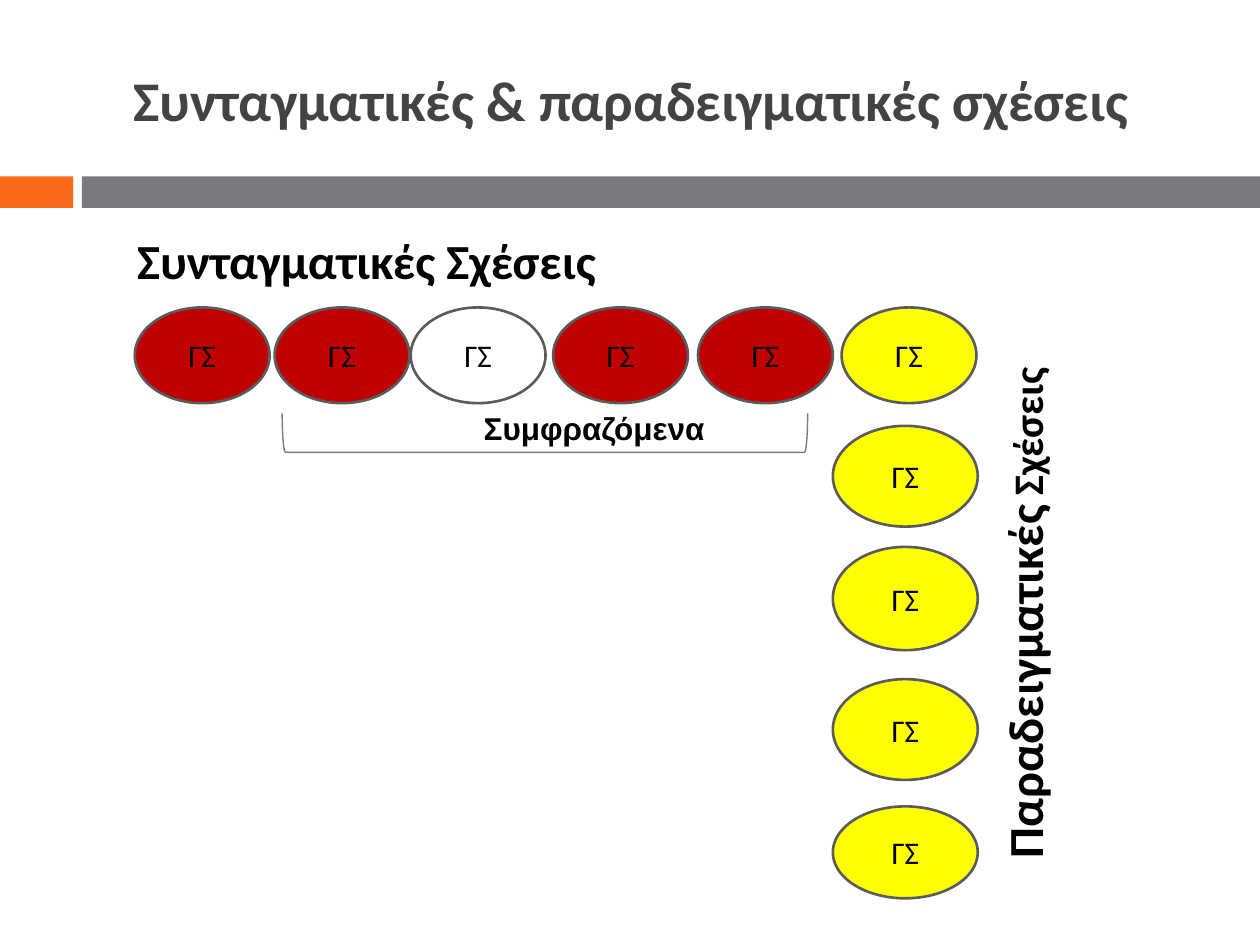
from pptx import Presentation
from pptx.dml.color import RGBColor
from pptx.enum.shapes import MSO_SHAPE
from pptx.enum.text import MSO_ANCHOR, PP_ALIGN
from pptx.util import Inches, Pt

RECTANGLE, ELLIPSE = MSO_SHAPE.RECTANGLE, MSO_SHAPE.OVAL
BRACKET = MSO_SHAPE.LEFT_BRACKET
MIDDLE, CENTER, LEFT = MSO_ANCHOR.MIDDLE, PP_ALIGN.CENTER, PP_ALIGN.LEFT

RED, WHITE, YELLOW = "C00000", "FFFFFF", "FFFF00"
ORANGE, GRAY, OUTLINE = "F96A1B", "797B7E", "5A5B5D"
BLACK, TITLE_GRAY = "000000", "434342"

LABEL = {"name": "Calibri", "size": Pt(18), "bold": False}
HEADING = {"name": "Calibri", "size": Pt(28), "bold": True}
HEADING_SMALL = {**HEADING, "size": Pt(24)}
TITLE = {**HEADING, "size": Pt(32)}
CONTEXT = {"name": "Arial", "size": Pt(18), "bold": True}

# Syntagmatic row: left edge and fill; paradigmatic column: top and height
ROW = [(1.07, RED), (2.18, RED), (3.26, WHITE), (4.39, RED), (5.54, RED), (6.68, YELLOW)]
COLUMN = [(3.38, 0.8), (4.34, 0.82), (5.39, 0.8), (6.4, 0.73)]


def rgb(color):
    return RGBColor.from_string(color)


def write(frame, pieces, align=LEFT, color=BLACK):
    """Write (text, format) pieces as the runs of one paragraph."""
    paragraph = frame.paragraphs[0]
    paragraph.alignment = align
    for text, style in pieces:
        run = paragraph.add_run()
        run.text = text
        run.font.color.rgb = rgb(color)
        for attribute, value in style.items():
            setattr(run.font, attribute, value)


def add_figure(slide, kind, box, fill=None, line=None, weight=1.5):
    figure = slide.shapes.add_shape(kind, *map(Inches, box))
    figure.shadow.inherit = False
    if fill:
        figure.fill.solid()
        figure.fill.fore_color.rgb = rgb(fill)
    else:
        figure.fill.background()
    if line:
        figure.line.color.rgb = rgb(line)
        figure.line.width = Pt(weight)
    else:
        figure.line.fill.background()
    return figure


def add_unit(slide, box, fill):
    frame = add_figure(slide, ELLIPSE, box, fill, OUTLINE).text_frame
    frame.vertical_anchor = MIDDLE
    write(frame, [("ΓΣ", LABEL)], CENTER)


def add_caption(slide, box, pieces, rotation=0):
    caption = slide.shapes.add_textbox(*map(Inches, box))
    caption.rotation = rotation
    caption.text_frame.word_wrap = True
    write(caption.text_frame, pieces)


def add_title(slide, box, text):
    title = slide.shapes.title
    title.left, title.top, title.width, title.height = map(Inches, box)
    title.text_frame.vertical_anchor = MIDDLE
    write(title.text_frame, [(text, TITLE)], CENTER, TITLE_GRAY)


def main():
    prs = Presentation()
    prs.slide_width, prs.slide_height = Inches(10), Inches(7.5)
    slide = prs.slides.add_slide(prs.slide_layouts[5])

    # Title and the band below it
    add_figure(slide, RECTANGLE, (0, 1.4, 0.58, 0.25), ORANGE)
    add_figure(slide, RECTANGLE, (0.65, 1.4, 9.35, 0.25), GRAY)
    add_title(slide, (0.13, 0.25, 9.76, 1.08), "Συνταγματικές & παραδειγματικές σχέσεις")

    # Syntagmatic relations
    for left, fill in ROW:
        add_unit(slide, (left, 2.44, 1.07, 0.76), fill)
    add_caption(slide, (0.99, 1.78, 4.06, 0.6), [("Συνταγματικές Σχέσεις", HEADING)])

    # Paradigmatic relations
    for top, height in COLUMN:
        add_unit(slide, (6.61, top, 1.15, height), YELLOW)
    add_caption(slide, (5.97, 4.44, 4.34, 0.6),
                [("Παραδειγματικές", HEADING), (" Σχέσεις", HEADING_SMALL)], 270)

    # Context bracket
    bracket = add_figure(slide, BRACKET, (4.17, 1.35, 0.31, 4.17), line=GRAY, weight=0.79)
    bracket.rotation = 270
    add_caption(slide, (3.74, 3.2, 2.28, 0.4), [("Συμφραζόμενα", CONTEXT)])

    prs.save("out.pptx")


if __name__ == "__main__":
    main()
